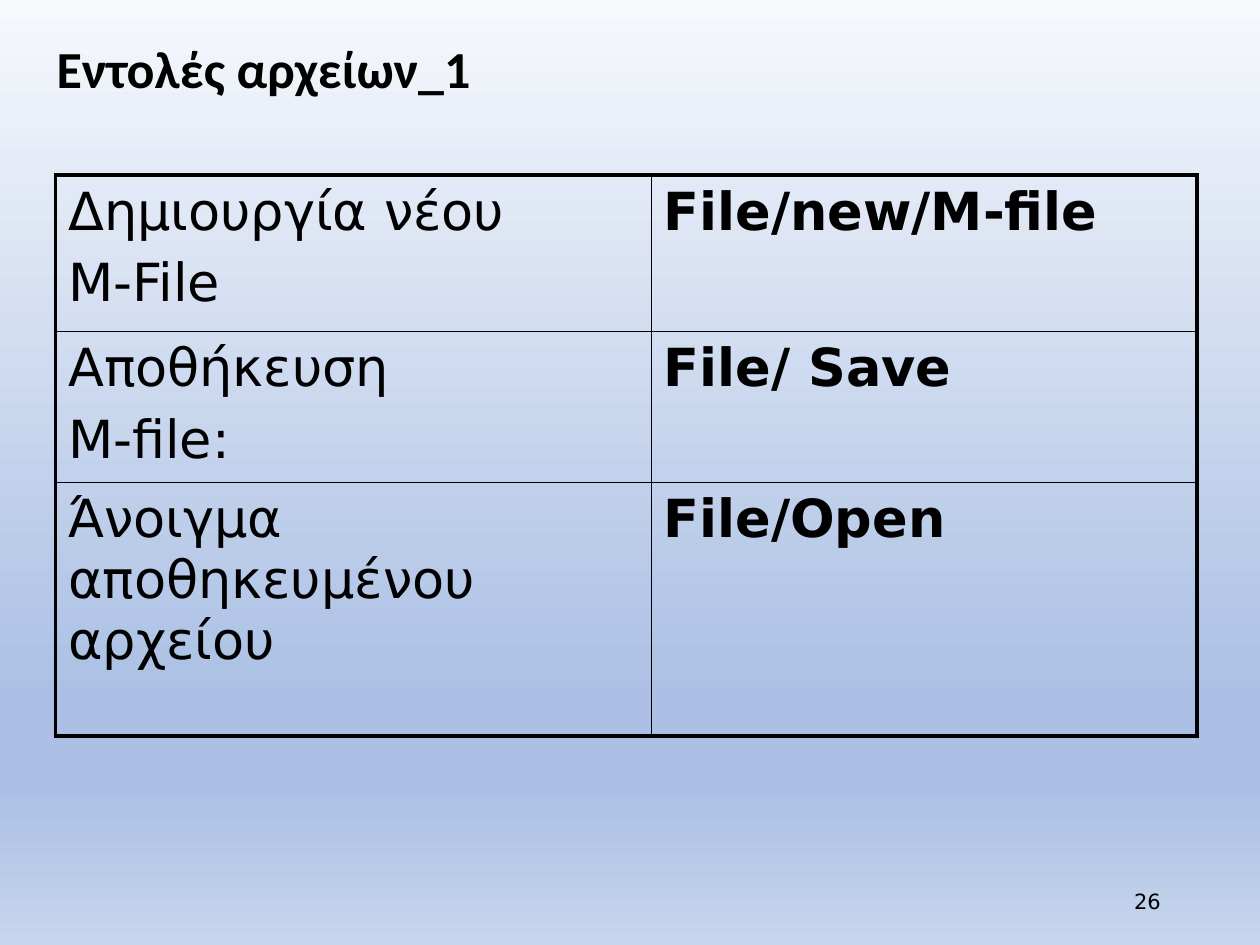
"""Build a slide with a table of file commands."""
from dataclasses import dataclass

from lxml import etree
from pptx import Presentation
from pptx.dml.color import RGBColor
from pptx.enum.text import MSO_ANCHOR, PP_ALIGN
from pptx.oxml.ns import qn
from pptx.slide import Slide
from pptx.table import _Cell
from pptx.text.text import _Paragraph
from pptx.util import Cm, Pt

MIDDLE = MSO_ANCHOR.MIDDLE
LEFT, RIGHT = PP_ALIGN.LEFT, PP_ALIGN.RIGHT
COLOURS = {"ink": "000000", "pale": "F6F8FC", "blue": "ABC0E4", "mist": "C7D5ED"}
GRADIENT = [(0, "pale"), (74, "blue"), (83, "blue"), (100, "mist")]
BODY_FONT, TITLE_FONT = "DejaVu Sans", "Calibri"
COLUMN_WIDTHS = (12.01, 11)
OUTER_LINE, INNER_LINE = Pt(2.25), Pt(1)


@dataclass(frozen=True)
class Label:
    """A line of text with its place in centimetres."""
    text: str
    left: float
    top: float
    width: float
    height: float
    font: str
    size: float
    bold: bool = False
    align: PP_ALIGN = LEFT
    line_spacing: float = 1.0


@dataclass(frozen=True)
class Command:
    """A table row: what is done, the menu path and the row height."""
    action: str
    menu: str
    height: float


LABELS = [
    Label("26", 17.93, 17.65, 5.72, 1.02, BODY_FONT, 12, align=RIGHT),
    Label("Εντολές αρχείων_1", 0.89, 0.74, 20.32, 1.4, TITLE_FONT, 29.7, True,
          line_spacing=0.9),
]
COMMANDS = [
    Command("Δημιουργία νέου\nM-File", "File/new/M-file", 3.15),
    Command("Αποθήκευση\nM-file:", "File/ Save", 3.05),
    Command("Άνοιγμα αποθηκευμένου αρχείου", "File/Open", 5.11),
]


def paint_background(slide: Slide) -> None:
    """Fill the slide with a vertical gradient."""
    fill = slide.background.fill
    fill.gradient()
    fill.gradient_angle = 270
    stops = next(slide.element.iter(qn("a:gsLst")))
    for stop in list(stops):
        stops.remove(stop)
    for percent, colour in GRADIENT:
        stop = etree.SubElement(stops, qn("a:gs"), pos=str(percent * 1000))
        etree.SubElement(stop, qn("a:srgbClr"), val=COLOURS[colour])


def style_runs(para: _Paragraph, font: str, size: float, bold: bool) -> None:
    """Format every run of a paragraph."""
    for span in para.runs:
        span.font.name = font
        span.font.size = Pt(size)
        span.font.bold = bold
        span.font.color.rgb = RGBColor.from_string(COLOURS["ink"])


def add_label(slide: Slide, label: Label) -> None:
    """Add a vertically centred text box."""
    box = slide.shapes.add_textbox(
        Cm(label.left), Cm(label.top), Cm(label.width), Cm(label.height))
    frame = box.text_frame
    frame.word_wrap = True
    frame.vertical_anchor = MIDDLE
    frame.text = label.text
    para = frame.paragraphs[0]
    para.alignment = label.align
    para.line_spacing = label.line_spacing
    style_runs(para, label.font, label.size, label.bold)


def set_borders(cell: _Cell, widths: dict[str, int]) -> None:
    """Draw the four borders of a cell, ahead of its fill."""
    properties = cell._tc.get_or_add_tcPr()
    for index, (side, width) in enumerate(widths.items()):
        line = etree.Element(qn(f"a:ln{side}"), w=str(width))
        solid = etree.SubElement(line, qn("a:solidFill"))
        etree.SubElement(solid, qn("a:srgbClr"), val=COLOURS["ink"])
        properties.insert(index, line)


def fill_cell(cell: _Cell, text: str, bold: bool) -> None:
    """Write a cell and leave it transparent."""
    cell.fill.background()
    cell.text_frame.text = text
    for index, para in enumerate(cell.text_frame.paragraphs):
        if index:
            para.space_before = Pt(6)
        style_runs(para, BODY_FONT, 30, bold)


def add_command_table(slide: Slide, commands: list[Command]) -> None:
    """Add the table with a heavy frame and thin inner lines."""
    table = slide.shapes.add_table(
        len(commands), len(COLUMN_WIDTHS), Cm(1.12), Cm(3.53),
        Cm(sum(COLUMN_WIDTHS)), Cm(sum(command.height for command in commands))).table
    table.first_row = table.horz_banding = False
    for column, width in zip(table.columns, COLUMN_WIDTHS):
        column.width = Cm(width)
    last_row, last_column = len(commands) - 1, len(COLUMN_WIDTHS) - 1
    for row, command in enumerate(commands):
        table.rows[row].height = Cm(command.height)
        for column, text in enumerate((command.action, command.menu)):
            cell = table.cell(row, column)
            fill_cell(cell, text, bold=column == last_column)
            outer = {"L": column == 0, "R": column == last_column,
                     "T": row == 0, "B": row == last_row}
            set_borders(cell, {side: OUTER_LINE if edge else INNER_LINE
                               for side, edge in outer.items()})


def main() -> None:
    """Build and save the deck."""
    deck = Presentation()
    deck.slide_width, deck.slide_height = Cm(25.4), Cm(19.05)
    slide = deck.slides.add_slide(deck.slide_layouts[6])
    paint_background(slide)
    for label in LABELS:
        add_label(slide, label)
    add_command_table(slide, COMMANDS)
    deck.save("out.pptx")


if __name__ == "__main__":
    main()
